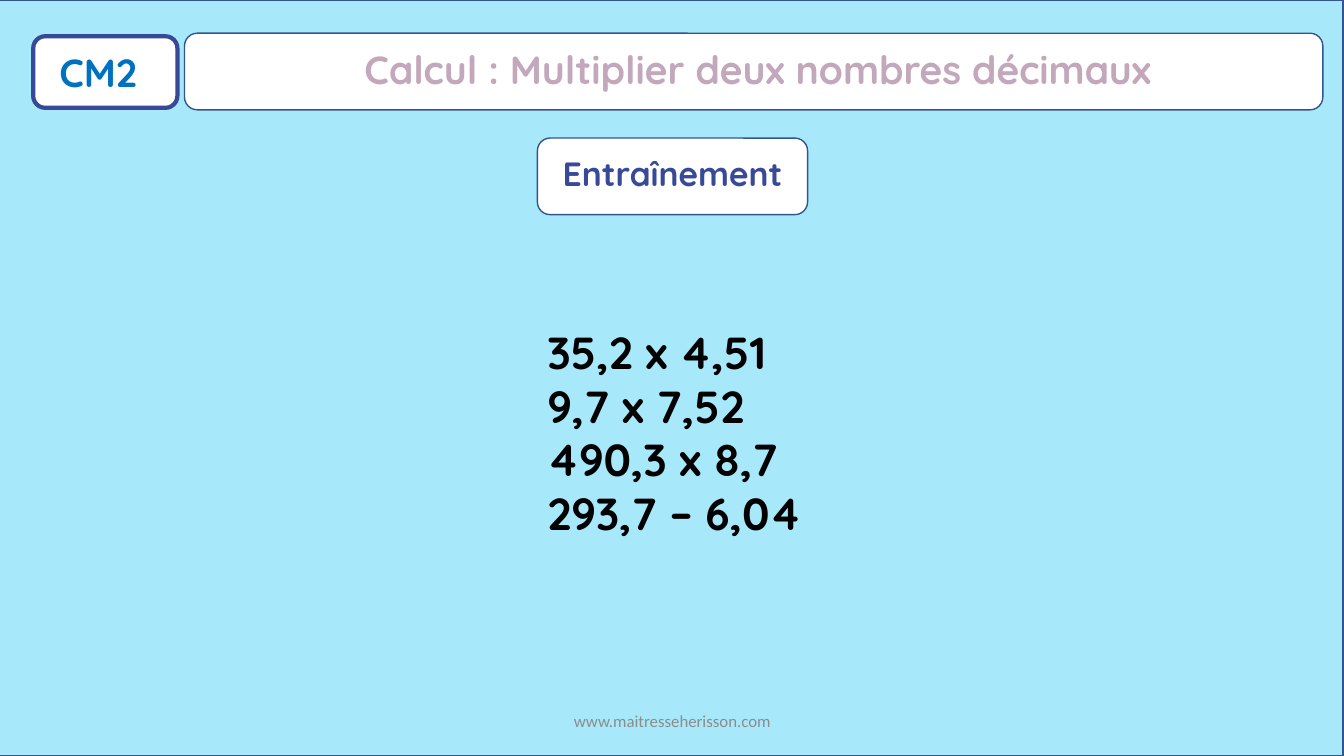
import pptx
import pptx.dml.color
import pptx.enum.shapes
import pptx.enum.text
import pptx.util

Inches = pptx.util.Inches
ALIGN = pptx.enum.text.PP_ALIGN
ANCHOR = pptx.enum.text.MSO_ANCHOR
SHAPE = pptx.enum.shapes.MSO_SHAPE

COLORS = {
    "sky": "A7E8FB",
    "white": "FFFFFF",
    "outline": "325491",
    "indigo": "374997",
    "level": "0070C0",
    "title": "C3A7BA",
    "sums": "000000",
    "footer": "8C8C8C",
}


def rgb(name):
    """Return the named colour."""
    return pptx.dml.color.RGBColor.from_string(COLORS[name])


def add_panel(slide, box, kind, fill, outline, weight):
    """Draw a filled, outlined panel in the box."""
    panel = slide.shapes.add_shape(kind, *map(Inches, box))
    panel.shadow.inherit = False
    panel.fill.solid()
    panel.fill.fore_color.rgb = rgb(fill)
    panel.line.color.rgb = rgb(outline)
    panel.line.width = pptx.util.Pt(weight)


def add_text(slide, box, lines, size, color, align=ALIGN.CENTER,
             font="Quicksand", bold=True, anchor=ANCHOR.TOP):
    """Write the lines, one paragraph each, in the box."""
    frame = slide.shapes.add_textbox(*map(Inches, box)).text_frame
    frame.word_wrap = True
    frame.vertical_anchor = anchor
    frame.text = "\n".join(lines)
    for paragraph in frame.paragraphs:
        paragraph.alignment = align
        for run in paragraph.runs:
            run.font.name = font
            run.font.size = pptx.util.Pt(size)
            run.font.bold = bold
            run.font.color.rgb = rgb(color)


def add_level(slide, left, top, width, height):
    """Draw the class level badge."""
    add_panel(slide, (left, top, width, height),
              SHAPE.ROUNDED_RECTANGLE, "white", "indigo", 3)
    add_text(slide, (left + 0.16, top + 0.07, width - 0.33, 0.57),
             ["CM2"], 28, "level", ALIGN.LEFT)


def add_title(slide, left, top, width, height):
    """Draw the lesson title bar."""
    add_panel(slide, (left, top, width, height),
              SHAPE.ROUNDED_RECTANGLE, "white", "outline", 1)
    add_text(slide, (left + 0.08, top + 0.07, width - 0.08, 0.57),
             ["Calcul : Multiplier deux nombres décimaux"], 28, "title")


def add_stage(slide, left, top, width, height):
    """Draw the label of the lesson stage."""
    add_panel(slide, (left, top, width, height),
              SHAPE.ROUNDED_RECTANGLE, "white", "outline", 1)
    add_text(slide, (left, top + 0.1, width, 0.5),
             ["Entraînement"], 24, "indigo")


def add_sums(slide, *box):
    """Write the list of sums to work out."""
    sums = ["35,2 x 4,51", "9,7 x 7,52", "490,3 x 8,7", "293,7 – 6,04"]
    add_text(slide, box, sums, 32, "sums", ALIGN.LEFT)


def add_footer(slide, *box):
    """Write the web address at the foot of the slide."""
    add_text(slide, box, ["www.maitresseherisson.com"], 12, "footer",
             font="Calibri", bold=False, anchor=ANCHOR.MIDDLE)


def main():
    """Build the exercise slide and save it."""
    deck = pptx.Presentation()
    deck.slide_width = Inches(13.33)
    deck.slide_height = Inches(7.5)
    slide = deck.slides.add_slide(deck.slide_layouts[6])
    add_panel(slide, (-0.01, 0, 13.33, 7.5),
              SHAPE.RECTANGLE, "sky", "outline", 1)
    add_level(slide, 0.33, 0.36, 1.43, 0.71)
    add_footer(slide, 4.42, 6.95, 4.5, 0.4)
    add_title(slide, 1.83, 0.33, 11.29, 0.76)
    add_stage(slide, 5.33, 1.37, 2.68, 0.76)
    add_sums(slide, 5.33, 3.17, 3.78, 2.26)
    deck.save("out.pptx")


if __name__ == "__main__":
    main()
